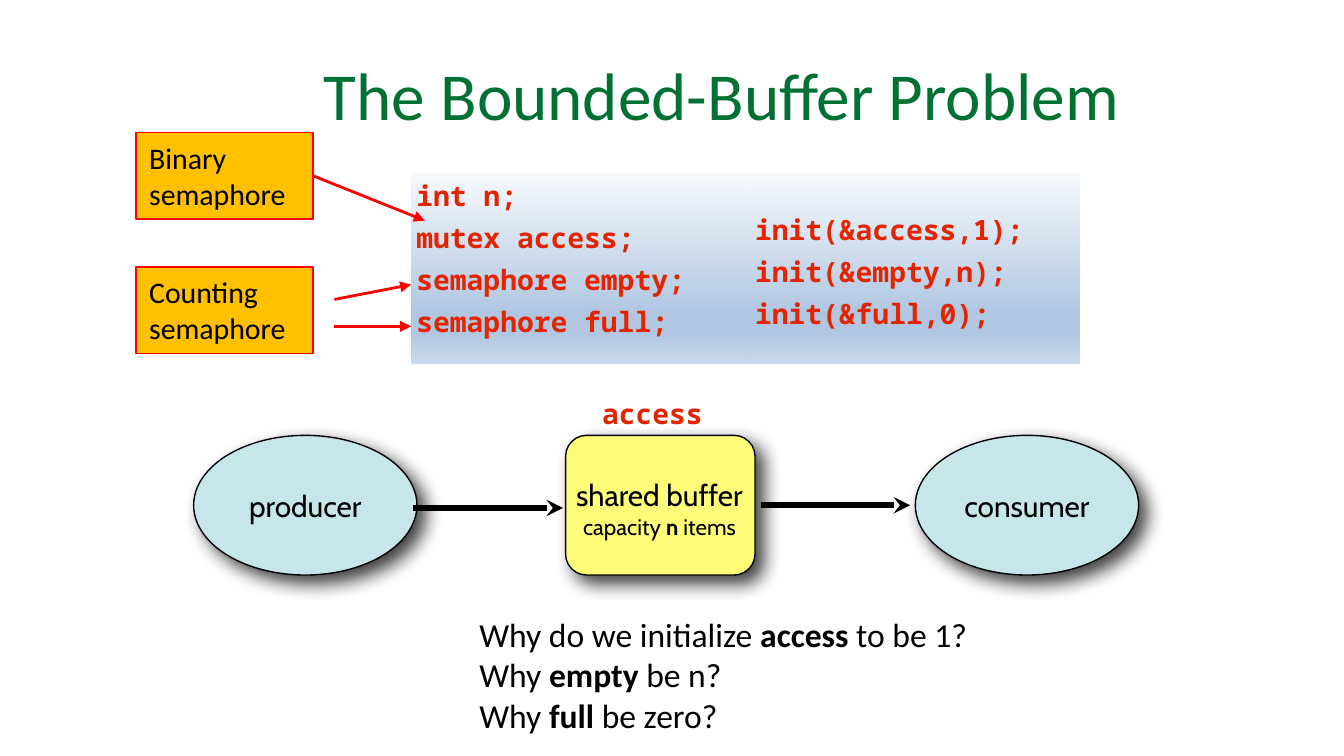
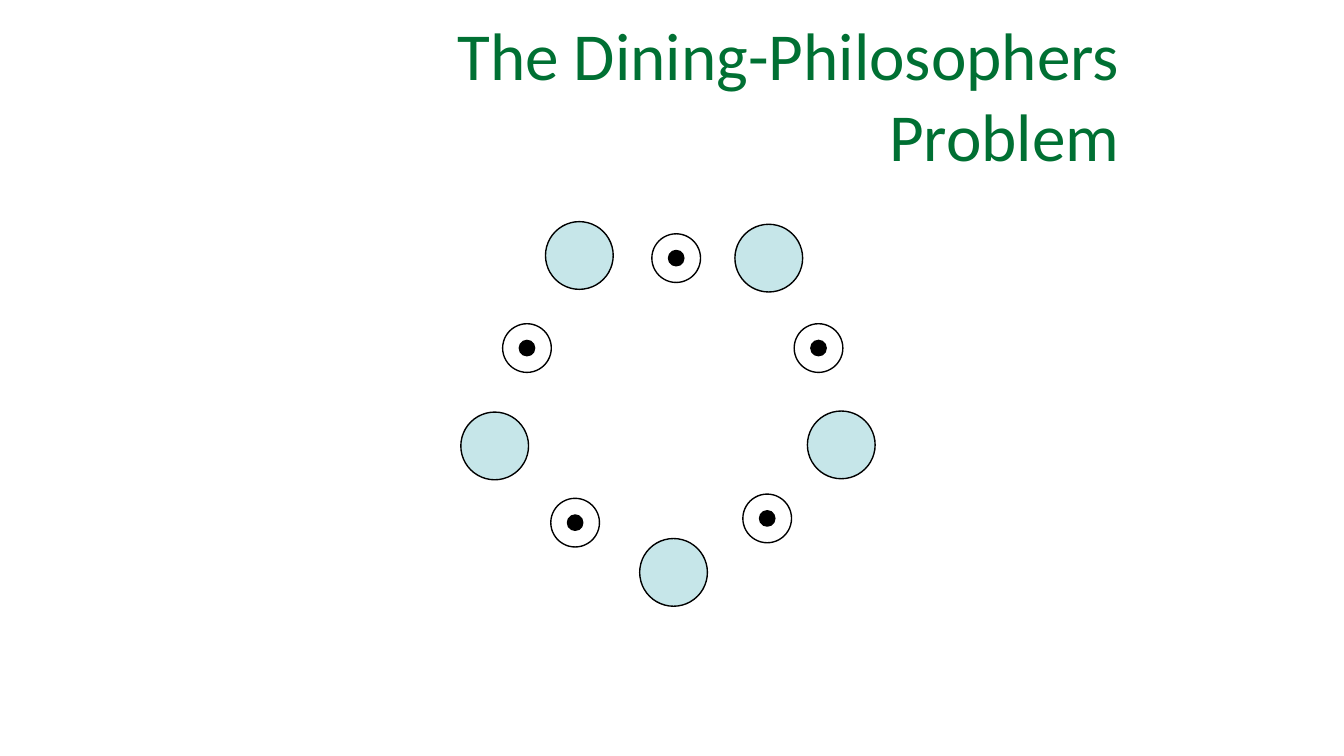
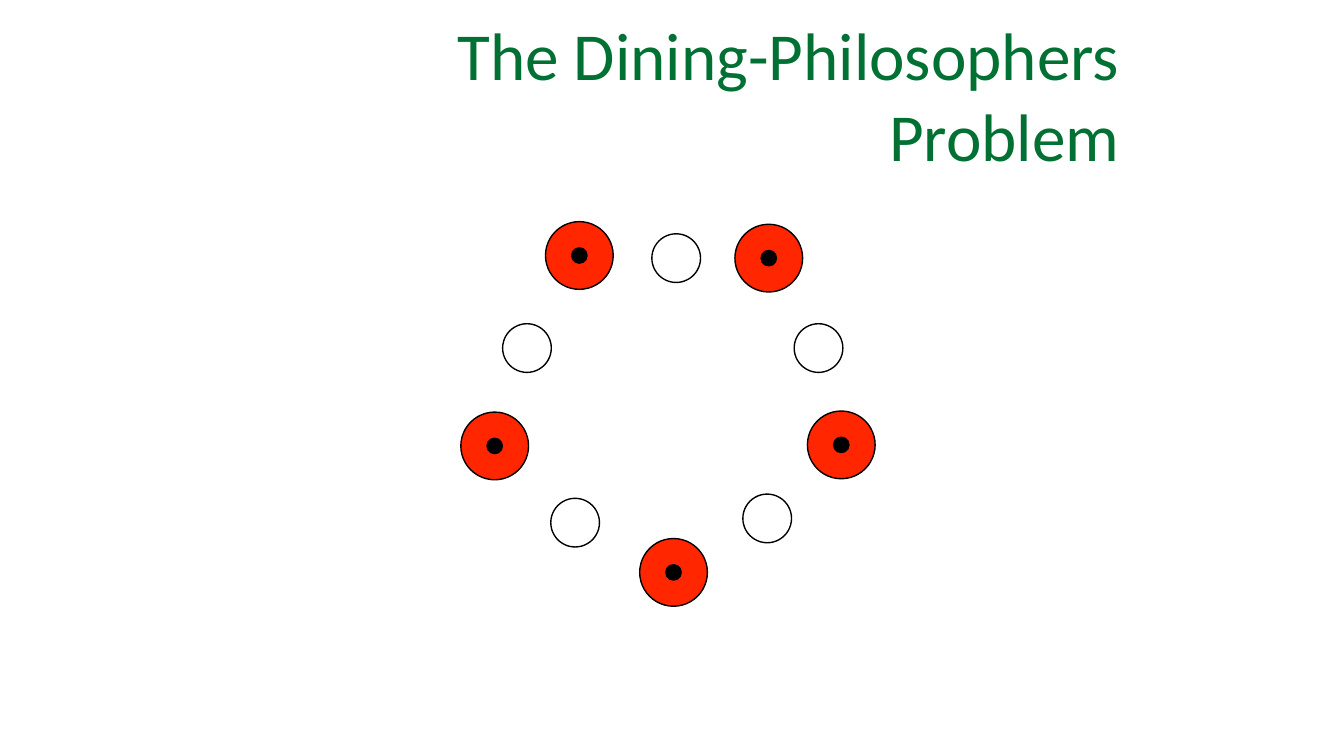
from lxml import etree
from pptx import Presentation
from pptx.dml.color import RGBColor
from pptx.enum.shapes import MSO_CONNECTOR, MSO_SHAPE
from pptx.enum.text import MSO_ANCHOR, MSO_AUTO_SIZE, PP_ALIGN
from pptx.oxml.ns import qn
from pptx.util import Cm, Pt

RECT, OVAL, ROUND = MSO_SHAPE.RECTANGLE, MSO_SHAPE.OVAL, MSO_SHAPE.ROUNDED_RECTANGLE
LEFT, MID, RIGHT = PP_ALIGN.LEFT, PP_ALIGN.CENTER, PP_ALIGN.RIGHT
TOP, CENTRE = MSO_ANCHOR.TOP, MSO_ANCHOR.MIDDLE
LINE = MSO_CONNECTOR.STRAIGHT
GROW, FIXED = MSO_AUTO_SIZE.SHAPE_TO_FIT_TEXT, MSO_AUTO_SIZE.NONE
RIGHT_SIDE = 3

GREEN = RGBColor(0x00, 0x70, 0x33)
BLACK = RGBColor(0x00, 0x00, 0x00)
RED = RGBColor(0xFF, 0x00, 0x00)
CODE = RGBColor(0xE3, 0x24, 0x00)
PALE = RGBColor(0xC6, 0xE6, 0xE9)
YELLOW = RGBColor(0xFF, 0xFC, 0x79)
AMBER = RGBColor(0xFF, 0xC0, 0x00)
EATING = RGBColor(0xFF, 0x26, 0x00)
STOPS = [(0, "F6F9FC"), (74, "B0C6E1"), (83, "B0C6E1"), (100, "CAD9EB")]

BODY, LABEL, MONO = "Calibri", "Cabin", "Noto Sans Mono"

# Centres of the table setting, in cm
SEATS = [(10.95, 4.83), (14.53, 4.88), (15.9, 8.41), (12.73, 10.82), (9.35, 8.43)]
FORKS = [(9.96, 6.58), (15.47, 6.58), (12.78, 4.88), (14.5, 9.8), (10.87, 9.88)]


# Text
def style(par, font, size, color, bold=False, align=LEFT):
    par.alignment = align
    for run in par.runs:
        run.font.name, run.font.size = font, Pt(size)
        run.font.color.rgb = color
        run.font.bold = bold


def write(shape, lines, font, size, color=BLACK, bold=False, align=LEFT,
          anchor=TOP, pad=0.1):
    frame = shape.text_frame
    frame.word_wrap = True
    frame.vertical_anchor = anchor
    if pad is not None:
        frame.margin_left = frame.margin_right = Cm(pad)
        frame.margin_top = frame.margin_bottom = Cm(pad)
    frame.text = "\n".join(lines)
    for par in frame.paragraphs:
        style(par, font, size, color, bold, align)
    return frame


def write_code(shape, lines):
    frame = write(shape, lines, MONO, 15, CODE, True)
    for i, par in enumerate(frame.paragraphs):
        par.line_spacing = Pt(18)
        if i:
            par.space_before = Pt(4.5)
    return frame


def mark_bold(par, *words):
    """Split the paragraph's only run so that the given words are bold."""
    first = par.runs[0]
    font, size, color = first.font.name, first.font.size.pt, first.font.color.rgb
    parts = [first.text]
    for word in words:
        head, tail = parts.pop().split(word, 1)
        parts += [head, word, tail]
    first.text = parts[0]
    for part in parts[1:]:
        par.add_run().text = part
    style(par, font, size, color, align=par.alignment)
    for run in par.runs[1::2]:
        run.font.bold = True


def text_box(slide, x, y, w, h):
    return slide.shapes.add_textbox(Cm(x), Cm(y), Cm(w), Cm(h))


# Shapes
def add_form(slide, kind, x, y, w, h, fill=None, line=BLACK):
    form = slide.shapes.add_shape(kind, Cm(x), Cm(y), Cm(w), Cm(h))
    form.shadow.inherit = False
    if fill is None:
        form.fill.background()
    else:
        form.fill.solid()
        form.fill.fore_color.rgb = fill
    if line is None:
        form.line.fill.background()
    else:
        form.line.color.rgb = line
        form.line.width = Pt(0.75)
    return form


def add_disc(slide, centre, size, fill=None):
    x, y = centre
    return add_form(slide, OVAL, x - size / 2, y - size / 2, size, size, fill)


def add_shade(form):
    effects = form._element.spPr.find(qn("a:effectLst"))
    shade = etree.SubElement(effects, qn("a:outerShdw"), blurRad=str(Pt(10)),
                             dist=str(Pt(6)), dir=str(45 * 60000),
                             algn="ctr", rotWithShape="0")
    color = etree.SubElement(shade, qn("a:srgbClr"), val="000000")
    etree.SubElement(color, qn("a:alpha"), val="75000")


def add_panel(slide, x, lines):
    panel = add_form(slide, RECT, x, 3.28, 6.32, 3.61, line=None)
    panel.fill.gradient()
    panel.fill.gradient_angle = 270
    stops = panel._element.spPr.find(qn("a:gradFill")).find(qn("a:gsLst"))
    for old in list(stops):
        stops.remove(old)
    for pos, color in STOPS:
        stop = etree.SubElement(stops, qn("a:gs"), pos=str(pos * 1000))
        etree.SubElement(stop, qn("a:srgbClr"), val=color)
    return write_code(panel, lines)


def add_actor(slide, x, name):
    actor = add_form(slide, OVAL, x, 8.23, 4.22, 2.64, PALE)
    add_shade(actor)
    write(actor, [name], LABEL, 16, align=MID, anchor=CENTRE)


def add_note(slide, y, text):
    note = add_form(slide, RECT, 2.57, y, 3.35, 1.63, AMBER, RED)
    write(note, [text], BODY, 16, pad=None)
    return note


def add_arrow(slide, start, end, color, width, head):
    points = [Cm(v) for v in (*start, *end)]
    arrow = slide.shapes.add_connector(LINE, *points)
    arrow.line.color.rgb = color
    arrow.line.width = Pt(width)
    etree.SubElement(arrow.line._get_or_add_ln(), qn("a:tailEnd"), type=head)
    etree.SubElement(arrow._element.spPr, qn("a:effectLst"))
    return arrow


# Slides
def add_slide(deck, text):
    slide = deck.slides.add_slide(deck.slide_layouts[5])
    title = slide.shapes.title
    title.left, title.top = Cm(4.11), Cm(0.2)
    title.width, title.height = Cm(17.15), Cm(3.15)
    frame = write(title, [text], BODY, 36, GREEN, align=RIGHT, anchor=CENTRE)
    frame.auto_size = FIXED
    return slide


def add_buffer(deck):
    slide = add_slide(deck, "The Bounded-Buffer Problem")

    # Declarations and initial values
    add_panel(slide, 7.77, ["int n;", "mutex access;", "semaphore empty;",
                            "semaphore full;"])
    setup = add_panel(slide, 14.09, ["init(&access,1);", "init(&empty,n);",
                                     "init(&full,0);"])
    setup.margin_left, setup.margin_top = Cm(0.18), Cm(0.74)

    # Producer, buffer and consumer
    add_actor(slide, 8.23 - 4.57, "producer")
    add_actor(slide, 17.3, "consumer")
    store = add_form(slide, ROUND, 10.69, 8.23, 3.58, 2.64, YELLOW)
    store.adjustments[0] = 0.15
    add_shade(store)
    label = write(text_box(slide, 10.52, 8.92, 3.89, 1.37),
                  ["shared buffer", "capacity n items"], LABEL, 16, align=MID)
    size = label.paragraphs[1]
    style(size, LABEL, 12, BLACK, align=MID)
    mark_bold(size, "n")
    write_code(text_box(slide, 11.28, 7.39, 2.64, 0.84), ["access"])
    add_arrow(slide, (7.8, 9.6), (10.64, 9.6), BLACK, 3, "stealth")
    add_arrow(slide, (14.38, 9.55), (17.2, 9.55), BLACK, 3, "stealth")

    # Kinds of semaphore
    binary = add_note(slide, 2.51, "Binary semaphore")
    add_note(slide, 5.05, "Counting semaphore")
    link = add_arrow(slide, (5.92, 3.33), (8.03, 4.17), RED, 1.5, "triangle")
    link.begin_connect(binary, RIGHT_SIDE)
    for start, end in ((5.66, 5.38), (6.17, 6.17)):
        add_arrow(slide, (6.32, start), (7.77, end), RED, 1.5, "triangle")

    # Questions
    asks = write(text_box(slide, 8.81, 11.48, 9.83, 2.57),
                 ["Why do we initialize access to be 1?", "Why empty be n?",
                  "Why full be zero?"], BODY, 18, pad=None)
    asks.word_wrap = False
    asks.auto_size = GROW
    for par, word in zip(asks.paragraphs, ("access", "empty", "full")):
        mark_bold(par, word)


def add_table_ring(deck, fill, tokens):
    slide = add_slide(deck, "The Dining-Philosophers Problem")
    for seat in SEATS:
        add_disc(slide, seat, 1.28, fill)
    for fork in FORKS:
        add_disc(slide, fork, 0.92)
    for token in tokens:
        add_disc(slide, token, 0.29, BLACK)


def main():
    deck = Presentation()
    deck.slide_width, deck.slide_height = Cm(25.4), Cm(14.29)
    add_buffer(deck)
    add_table_ring(deck, PALE, FORKS)
    add_table_ring(deck, EATING, SEATS)
    deck.save("out.pptx")


if __name__ == "__main__":
    main()
